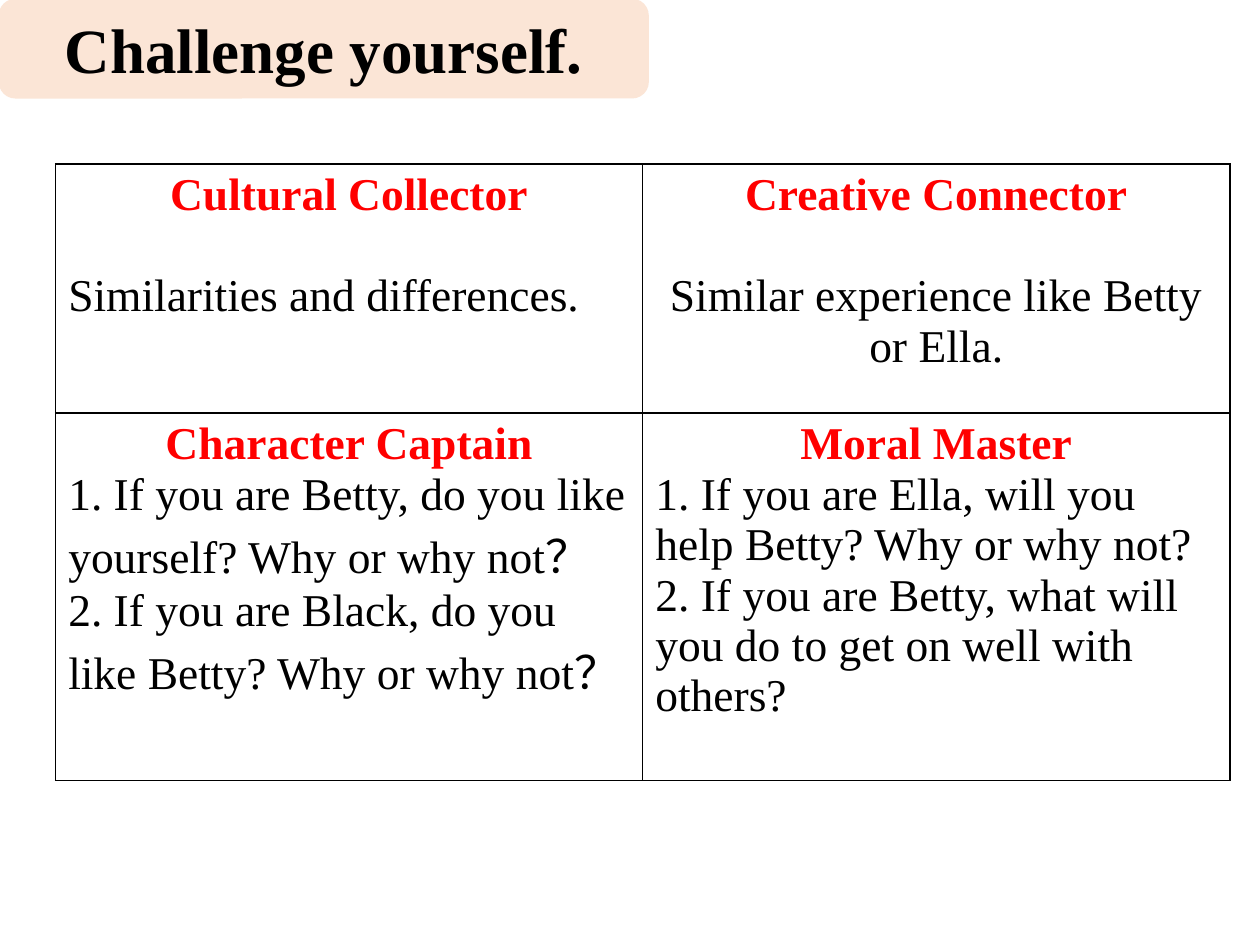
"""Build the "Challenge yourself" slide with its table of four reading roles."""
from dataclasses import dataclass

from lxml.etree import SubElement
from pptx import Presentation
from pptx.dml.color import RGBColor
from pptx.enum.shapes import MSO_SHAPE
from pptx.enum.text import MSO_ANCHOR, MSO_AUTO_SIZE, PP_ALIGN
from pptx.oxml.ns import qn
from pptx.util import Pt


@dataclass(frozen=True)
class Theme:
    font: str = "Times New Roman"
    ink: str = "000000"
    head: str = "FF0000"
    band: str = "FBE5D6"
    big: float = 36
    body: float = 26
    rule: float = 1


@dataclass(frozen=True)
class Role:
    name: str
    lines: tuple[str, ...]
    gap: float = 0
    align: PP_ALIGN = PP_ALIGN.LEFT


THEME = Theme()
BANNER = (Pt(-0.7), Pt(-0.7), Pt(371.5), Pt(57))
GRID = (Pt(31.8), Pt(93.6), Pt(671), Pt(352.5))
ROWS = (142.5, 210)
ROLES = (
    (
        Role("Cultural Collector", ("Similarities and differences.",), 29),
        Role("Creative Connector", ("Similar experience like Betty or Ella.",),
             29, PP_ALIGN.CENTER),
    ),
    (
        Role("Character Captain", (
            "1. If you are Betty, do you like yourself? Why or why not？",
            "2. If you are Black, do you like Betty? Why or why not？")),
        Role("Moral Master", (
            "1. If you are Ella, will you help Betty? Why or why not?",
            "2. If you are Betty, what will you do to get on well with others?")),
    ),
)


def write(para, text: str, *, size: float = THEME.body, color: str = THEME.ink,
          bold: bool = False, align: PP_ALIGN = PP_ALIGN.LEFT,
          after: float = 0) -> None:
    para.alignment = align
    para.line_spacing = 1.0
    para.space_before, para.space_after = Pt(0), Pt(after)
    run = para.add_run()
    run.text = text
    font = run.font
    font.name, font.size, font.bold = THEME.font, Pt(size), bold
    font.color.rgb = RGBColor.from_string(color)


def border(cell) -> None:
    props = cell._tc.get_or_add_tcPr()
    for side in ("a:lnL", "a:lnR", "a:lnT", "a:lnB"):
        line = SubElement(props, qn(side), w=str(Pt(THEME.rule)))
        fill = SubElement(line, qn("a:solidFill"))
        SubElement(fill, qn("a:srgbClr"), val=THEME.ink)


def draw_role(cell, role: Role) -> None:
    border(cell)
    cell.fill.background()
    frame = cell.text_frame
    write(frame.paragraphs[0], role.name, color=THEME.head, bold=True,
          align=PP_ALIGN.CENTER, after=role.gap)
    for line in role.lines:
        write(frame.add_paragraph(), line, align=role.align)


def draw_title(slide, text: str) -> None:
    band = slide.shapes.add_shape(MSO_SHAPE.ROUNDED_RECTANGLE, *BANNER)
    band.shadow.inherit = False
    band.fill.solid()
    band.fill.fore_color.rgb = RGBColor.from_string(THEME.band)
    band.line.fill.background()
    title = slide.shapes.title
    title._element.addprevious(band._element)
    title.left, title.top, title.width, title.height = BANNER
    frame = title.text_frame
    frame.auto_size = MSO_AUTO_SIZE.NONE
    frame.word_wrap = True
    frame.vertical_anchor = MSO_ANCHOR.MIDDLE
    write(frame.paragraphs[0], text, size=THEME.big, bold=True,
          align=PP_ALIGN.CENTER)


def draw_grid(slide) -> None:
    table = slide.shapes.add_table(len(ROLES), len(ROLES[0]), *GRID).table
    table.first_row = table.horz_banding = False
    for row, high, roles in zip(table.rows, ROWS, ROLES):
        row.height = Pt(high)
        for cell, role in zip(row.cells, roles):
            draw_role(cell, role)


def main() -> None:
    deck = Presentation()
    deck.slide_width, deck.slide_height = Pt(720), Pt(540)
    slide = deck.slides.add_slide(deck.slide_layouts.get_by_name("Title Only"))
    draw_title(slide, "Challenge yourself.")
    draw_grid(slide)
    deck.save("out.pptx")


if __name__ == "__main__":
    main()
